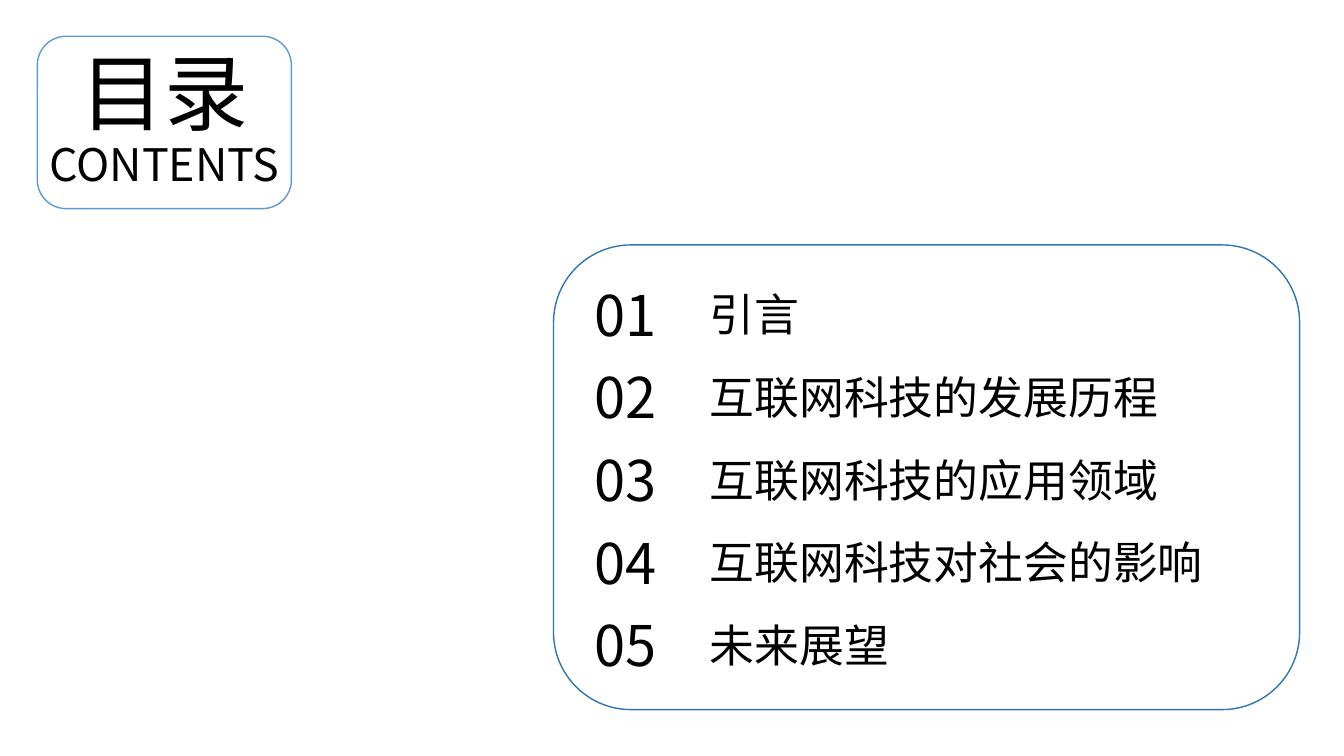
import pptx
import pptx.util
import pptx.dml.color
import pptx.enum.shapes
import pptx.enum.text
import pptx.oxml.ns
from lxml import etree

Inches = pptx.util.Inches
RGB = pptx.dml.color.RGBColor
ALIGN = pptx.enum.text.PP_ALIGN
FIT = pptx.enum.text.MSO_AUTO_SIZE

BLACK = RGB(0x00, 0x00, 0x00)
WHITE = RGB(0xFF, 0xFF, 0xFF)
LIGHT = RGB(0x5B, 0x9B, 0xD5)
DARK = RGB(0x2E, 0x75, 0xB6)
SANS = "Noto Sans CJK SC"

TOPICS = ["引言", "互联网科技的发展历程", "互联网科技的应用领域",
          "互联网科技对社会的影响", "未来展望"]
TOP, STEP = 2.73, 0.82


def assign(item, values):
    for name, value in values.items():
        setattr(item, name, value)


def place(shape, box):
    sides = ("left", "top", "width", "height")
    assign(shape, dict(zip(sides, map(Inches, box))))


def write(shape, text, size, font=SANS, align=ALIGN.LEFT, fit=FIT.SHAPE_TO_FIT_TEXT):
    frame = shape.text_frame
    frame.text = text
    assign(frame, {"word_wrap": True, "auto_size": fit})
    para = frame.paragraphs[0]
    para.alignment = align
    run = para.runs[0]
    assign(run.font, {"name": font, "size": pptx.util.Pt(size)})
    run.font.color.rgb = BLACK
    # East Asian typeface for the Chinese characters
    ea = etree.SubElement(run.font._element, pptx.oxml.ns.qn("a:ea"))
    ea.set("typeface", SANS)


def label(slide, box, text, size, **style):
    shape = slide.shapes.add_textbox(*map(Inches, box))
    write(shape, text, size, **style)


def card(slide, box, color):
    kind = pptx.enum.shapes.MSO_SHAPE.ROUNDED_RECTANGLE
    shape = slide.shapes.add_shape(kind, *map(Inches, box))
    shape.shadow.inherit = False
    shape.fill.solid()
    shape.fill.fore_color.rgb = WHITE
    shape.line.color.rgb = color
    shape.line.width = pptx.util.Pt(1)


def heading(slide):
    card(slide, (0.37, 0.36, 2.52, 1.71), LIGHT)
    label(slide, (0.37, 1.31, 2.52, 0.64), "CONTENTS", 32, align=ALIGN.CENTER)
    title = slide.shapes.title
    place(title, (0.37, 0.36, 2.52, 1.09))
    write(title, "目录", 60, font="Calibri", align=ALIGN.CENTER, fit=FIT.NONE)
    # Bring the title in front of its card
    slide.shapes._spTree.append(title._element)


def agenda(slide):
    card(slide, (5.49, 2.43, 7.4, 4.61), DARK)
    for row, topic in enumerate(TOPICS):
        top = TOP + row * STEP
        label(slide, (5.8, top, 1.14, 0.77), f"{row + 1:02}", 40)
        label(slide, (6.94, top + 0.07, 5.65, 0.64), topic, 32)


def main():
    deck = pptx.Presentation()
    assign(deck, {"slide_width": Inches(13.33), "slide_height": Inches(7.5)})
    slide = deck.slides.add_slide(deck.slide_layouts[5])
    heading(slide)
    agenda(slide)
    deck.save("out.pptx")


if __name__ == "__main__":
    main()
